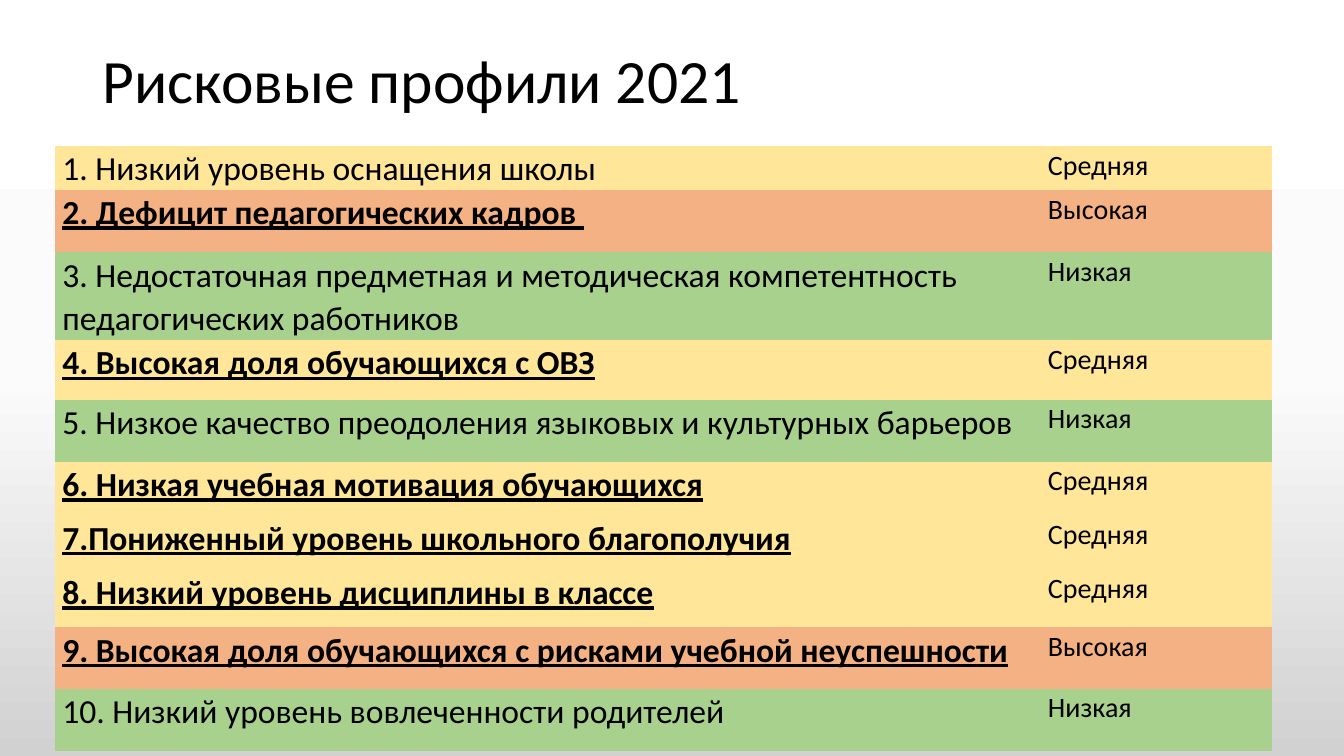
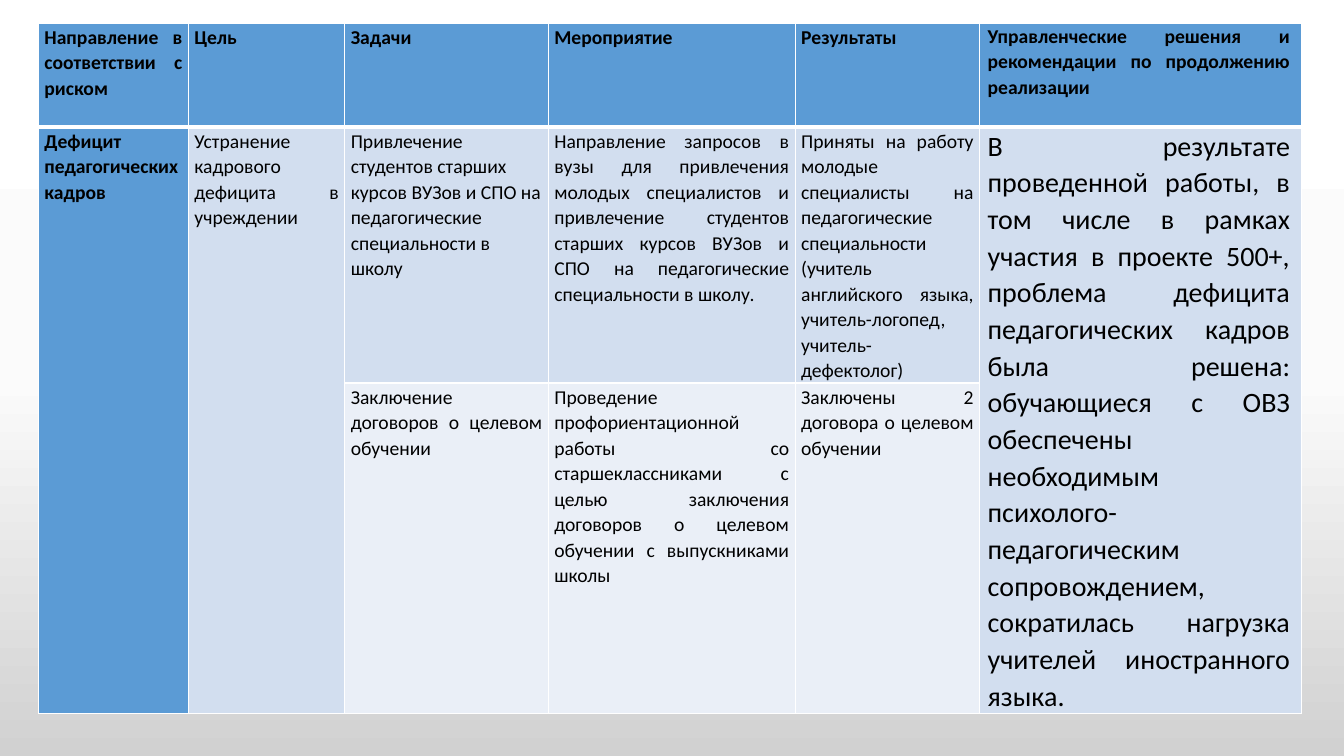
from copy import deepcopy

from lxml import etree
from pptx import Presentation
from pptx.dml.color import RGBColor
from pptx.enum.text import MSO_ANCHOR, PP_ALIGN
from pptx.oxml.ns import qn
from pptx.util import Cm, Pt

# Shared look
FONT = "Calibri"
BLACK, WHITE = "000000", "FFFFFF"
BACKGROUND = [(0, "FFFFFF"), (0.5, "FBFBFB"), (1, "D1D1D1")]
HEADER, ROW_DARK, ROW_LIGHT = "5B9BD5", "D2DEEF", "EAEFF7"
LEVEL_FILLS = {"Низкая": "A9D18E", "Средняя": "FFE699", "Высокая": "F4B183"}
LINE_SPACING = 1.07
PLAIN_TABLE = "{2D5ABB26-0587-4C30-8999-92F81FD0307C}"
TITLE_ONLY, BLANK = 5, 6

# Slide 1: risk, level, row height in cm, emphasised
RISKS = [
    ("1. Низкий уровень оснащения школы", "Средняя", 1.02, False),
    ("2. Дефицит педагогических кадров ", "Высокая", 1.57, True),
    ("3. Недостаточная предметная и методическая компетентность "
     "педагогических работников", "Низкая", 2.01, False),
    ("4. Высокая доля обучающихся с ОВЗ", "Средняя", 1.5, True),
    ("5. Низкое качество преодоления языковых и культурных барьеров",
     "Низкая", 1.57, False),
    ("6. Низкая учебная мотивация обучающихся", "Средняя", 1.35, True),
    ("7.Пониженный уровень школьного благополучия", "Средняя", 1.37, True),
    ("8. Низкий уровень дисциплины в классе", "Средняя", 1.45, True),
    ("9. Высокая доля обучающихся с рисками учебной неуспешности",
     "Высокая", 1.55, True),
    ("10. Низкий уровень вовлеченности родителей", "Низкая", 1.57, False),
]
RISK_COLUMNS = [24.84, 5.84]
RISK_INSETS = (0.19, 0, 0.19, 0)

# Slide 2: None marks a cell covered by the one above it
PLAN = [
    ["Направление в соответствии с риском", "Цель", "Задачи", "Мероприятие",
     "Результаты",
     "Управленческие решения и рекомендации по продолжению реализации"],
    ["Дефицит педагогических кадров",
     "Устранение кадрового дефицита в учреждении",
     "Привлечение студентов старших курсов ВУЗов и СПО на педагогические "
     "специальности в школу",
     "Направление запросов в вузы для привлечения молодых специалистов и "
     "привлечение студентов старших курсов ВУЗов и СПО на педагогические "
     "специальности в школу.",
     "Приняты на работу молодые специалисты на педагогические специальности "
     "(учитель английского языка, учитель-логопед, учитель-дефектолог)",
     "В результате проведенной работы, в том числе в рамках участия в "
     "проекте 500+, проблема дефицита педагогических кадров была решена: "
     "обучающиеся с ОВЗ обеспечены необходимым психолого-педагогическим "
     "сопровождением, сократилась нагрузка учителей иностранного языка."],
    [None, None,
     "Заключение договоров о целевом обучении",
     "Проведение профориентационной работы со старшеклассниками с целью "
     "заключения договоров о целевом обучении с выпускниками школы",
     "Заключены 2 договора о целевом обучении", None],
]
PLAN_COLUMNS = [3.78, 3.94, 5.13, 6.22, 4.65, 8.1]
PLAN_ROWS = [2.62, 5.13, 7.34]
PLAN_INSETS = (0.15, 0.02, 0.15, 0)
DECISION_INSETS = (0.2, 0, 0.28, 0)
LEFT_ALIGNED = {(1, 0), (1, 2)}


def rgb(value):
    return RGBColor.from_string(value)


def set_background(master):
    fill = master.background.fill
    fill.gradient()
    fill.gradient_angle = 270
    stop_list = master.element.xpath("p:cSld/p:bg//a:gsLst")[0]
    stop_list.append(deepcopy(stop_list[0]))
    for stop, (position, color) in zip(fill.gradient_stops, BACKGROUND):
        stop.position = position
        stop.color.rgb = rgb(color)


def style_paragraph(paragraph, size, bold=False, underline=False,
                    align=PP_ALIGN.LEFT, spacing=LINE_SPACING):
    paragraph.alignment = align
    paragraph.line_spacing = spacing
    font = paragraph.font
    font.name, font.size = FONT, Pt(size)
    font.bold, font.underline = bold, underline
    font.color.rgb = rgb(BLACK)


def add_title(slide, text):
    title = slide.shapes.title
    title.left, title.top = Cm(2.33), Cm(1.01)
    title.width, title.height = Cm(29.21), Cm(2.2)
    title.text_frame.text = text
    title.text_frame.vertical_anchor = MSO_ANCHOR.MIDDLE
    style_paragraph(title.text_frame.paragraphs[0], 44, spacing=0.9)


def add_plain_table(slide, left, top, columns, rows):
    frame = slide.shapes.add_table(len(rows), len(columns), Cm(left), Cm(top),
                                   Cm(sum(columns)), Cm(sum(rows)))
    frame.element.xpath(".//a:tableStyleId")[0].text = PLAIN_TABLE
    table = frame.table
    table.first_row = table.horz_banding = False
    for column, width in zip(table.columns, columns):
        column.width = Cm(width)
    for row, height in zip(table.rows, rows):
        row.height = Cm(height)
    return table


def fill_cell(cell, color):
    cell.fill.solid()
    cell.fill.fore_color.rgb = rgb(color)


def write_cell(cell, text, insets, size, **style):
    (cell.margin_left, cell.margin_top,
     cell.margin_right, cell.margin_bottom) = map(Cm, insets)
    cell.text = text
    style_paragraph(cell.text_frame.paragraphs[0], size, **style)


def add_borders(cell, widths):
    """Draw white borders; widths are points for left, right, top, bottom."""
    properties = cell._tc.get_or_add_tcPr()
    for side, width in zip("LRTB", widths):
        line = etree.SubElement(properties, qn(f"a:ln{side}"), w=str(Pt(width)))
        solid = etree.SubElement(line, qn("a:solidFill"))
        etree.SubElement(solid, qn("a:srgbClr"), val=WHITE)


def build_risk_slide(slide):
    add_title(slide, "Рисковые профили 2021")
    table = add_plain_table(slide, 1.38, 3.68, RISK_COLUMNS,
                            [height for _, _, height, _ in RISKS])
    for row, (risk, level, _, strong) in enumerate(RISKS):
        risk_cell, level_cell = table.cell(row, 0), table.cell(row, 1)
        write_cell(risk_cell, risk, RISK_INSETS, 24, bold=strong, underline=strong)
        write_cell(level_cell, level, RISK_INSETS, 20)
        for cell in (risk_cell, level_cell):
            fill_cell(cell, LEVEL_FILLS[level])


def plan_fill(row, column):
    if row == 0 or column == 0:
        return HEADER
    return ROW_LIGHT if row == 2 and PLAN[row][column] else ROW_DARK


def build_plan_slide(slide):
    table = add_plain_table(slide, 0.97, 0.58, PLAN_COLUMNS, PLAN_ROWS)
    decision = len(PLAN_COLUMNS) - 1
    for row, texts in enumerate(PLAN):
        for column, text in enumerate(texts):
            cell = table.cell(row, column)
            add_borders(cell, (1, 1, 3 if row == 1 else 1, 3 if row == 0 else 1))
            fill_cell(cell, plan_fill(row, column))
            if text is None:
                table.cell(row - 1, column).merge(cell)
                continue
            write_cell(
                cell, text,
                DECISION_INSETS if column == decision else PLAN_INSETS,
                20 if (row, column) == (1, decision) else 14,
                bold=row == 0 or column == 0,
                align=(PP_ALIGN.LEFT if (row, column) in LEFT_ALIGNED
                       else PP_ALIGN.JUSTIFY))


def main():
    presentation = Presentation()
    presentation.slide_width, presentation.slide_height = Cm(33.87), Cm(19.05)
    set_background(presentation.slide_master)
    layouts = presentation.slide_layouts
    build_risk_slide(presentation.slides.add_slide(layouts[TITLE_ONLY]))
    build_plan_slide(presentation.slides.add_slide(layouts[BLANK]))
    presentation.save("out.pptx")


if __name__ == "__main__":
    main()
